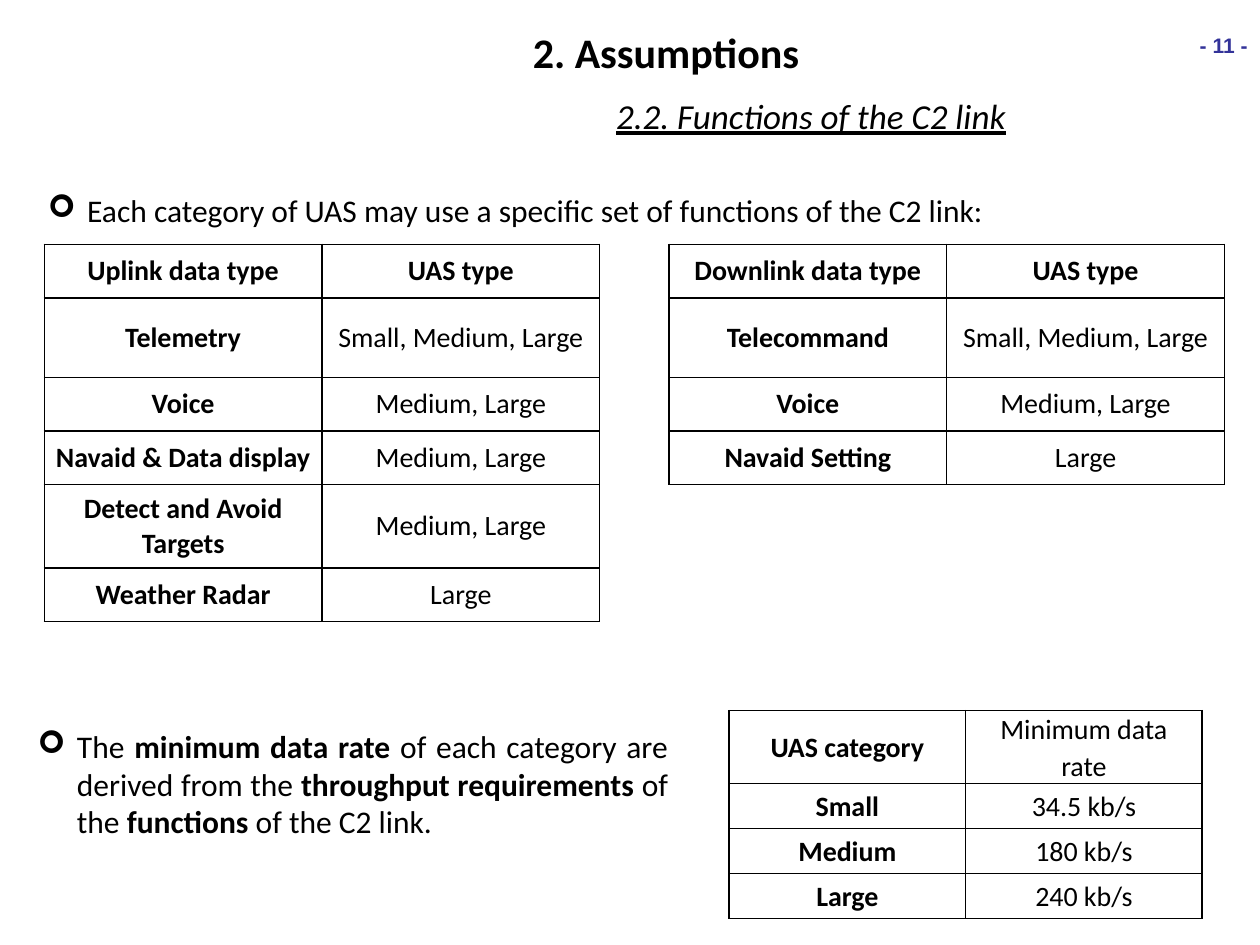
from lxml import etree
from pptx import Presentation
from pptx.dml.color import RGBColor
from pptx.enum.text import MSO_ANCHOR as Anchor, PP_ALIGN as Align
from pptx.oxml.ns import qn
from pptx.util import Pt

COLORS = {"text": "000000", "border": "000000", "page": "333399"}
INDENT = 22.5
CELL_INSET = 5.2
ROW, TALL_ROW, WRAPPED_ROW = 30.7, 45.2, 47.6

UPLINK = [
    ("Uplink data type", "UAS type"),
    ("Telemetry", "Small, Medium, Large"),
    ("Voice", "Medium, Large"),
    ("Navaid & Data display", "Medium, Large"),
    ("Detect and Avoid Targets", "Medium, Large"),
    ("Weather Radar", "Large"),
]
DOWNLINK = [
    ("Downlink data type", "UAS type"),
    ("Telecommand", "Small, Medium, Large"),
    ("Voice", "Medium, Large"),
    ("Navaid Setting", "Large"),
]
DATA_RATES = [
    ("UAS category", "Minimum data rate"),
    ("Small", "34.5 kb/s"),
    ("Medium", "180 kb/s"),
    ("Large", "240 kb/s"),
]


def write(paragraph, text, size=16, font="Calibri", color="text",
          bold=False, italic=False, underline=False, align=None):
    """Append one formatted run to the paragraph."""
    run = paragraph.add_run()
    run.text = text
    run.font.size = Pt(size)
    run.font.name = font
    run.font.color.rgb = RGBColor.from_string(COLORS[color])
    run.font.bold = bold
    run.font.italic = italic
    run.font.underline = underline
    if align is not None:
        paragraph.alignment = align


def add_box(slide, left, top, width, height, wrap=True):
    """Add a text box and return its first paragraph."""
    frame = slide.shapes.add_textbox(
        Pt(left), Pt(top), Pt(width), Pt(height)).text_frame
    frame.word_wrap = wrap
    return frame.paragraphs[0]


def add_bullet(slide, left, top, width, height, parts):
    """Add an arrow-bulleted paragraph from (text, bold) parts."""
    paragraph = add_box(slide, left, top, width, height)
    properties = paragraph._p.get_or_add_pPr()
    properties.set("marL", str(Pt(INDENT)))
    properties.set("indent", str(Pt(-INDENT)))
    etree.SubElement(properties, qn("a:buFont"), typeface="Wingdings")
    etree.SubElement(properties, qn("a:buChar"), char="➢")
    paragraph.space_after = Pt(24)
    for text, bold in parts:
        write(paragraph, text, size=18, bold=bold, align=Align.JUSTIFY)


def add_borders(cell):
    properties = cell._tc.get_or_add_tcPr()
    for side in ("a:lnL", "a:lnR", "a:lnT", "a:lnB"):
        line = etree.SubElement(properties, qn(side), w=str(Pt(1)))
        fill = etree.SubElement(line, qn("a:solidFill"))
        etree.SubElement(fill, qn("a:srgbClr"), val=COLORS["border"])


def add_grid(slide, left, top, column_width, row_heights, rows,
             bold_header=True, line_spacing=None):
    """Add a two-column bordered table with bold row labels."""
    table = slide.shapes.add_table(
        len(rows), 2, Pt(left), Pt(top),
        Pt(2 * column_width), Pt(sum(row_heights))).table
    table.first_row = table.horz_banding = False
    for column in table.columns:
        column.width = Pt(column_width)
    for r, (height, texts) in enumerate(zip(row_heights, rows)):
        table.rows[r].height = Pt(height)
        for c, text in enumerate(texts):
            cell = table.cell(r, c)
            cell.margin_left = cell.margin_right = Pt(CELL_INSET)
            cell.margin_top = cell.margin_bottom = 0
            cell.vertical_anchor = Anchor.MIDDLE
            add_borders(cell)
            cell.fill.background()
            paragraph = cell.text_frame.paragraphs[0]
            paragraph.line_spacing = line_spacing
            write(paragraph, text, align=Align.CENTER,
                  bold=c == 0 or (r == 0 and bold_header))


def main():
    deck = Presentation()
    deck.slide_width, deck.slide_height = Pt(720), Pt(540)
    slide = deck.slides.add_slide(deck.slide_layouts[6])

    write(add_box(slide, 669, 15, 51, 21.6, wrap=False), "- 11 -", size=12,
          font="Arial", color="page", bold=True, align=Align.RIGHT)
    write(add_box(slide, 297.4, 11.5, 168.5, 36, wrap=False),
          "2. Assumptions", size=24, bold=True)
    write(add_box(slide, 345, 50.4, 360.7, 31.5),
          "2.2. Functions of the C2 link", size=20, italic=True,
          underline=True, align=Align.JUSTIFY)

    add_bullet(slide, 20.2, 105.8, 686, 29, [
        ("Each category of UAS may use a specific set of functions "
         "of the C2 link:", False)])
    common_rows = [ROW, TALL_ROW, ROW, ROW]
    add_grid(slide, 25.3, 139.7, 158.7, common_rows + [WRAPPED_ROW, ROW], UPLINK)
    add_grid(slide, 382.3, 139.7, 158.7, common_rows, DOWNLINK)

    add_bullet(slide, 14.4, 411.8, 374.4, 72.7, [
        ("The ", False),
        ("minimum data rate ", True),
        ("of each category are derived from the ", False),
        ("throughput requirements ", True),
        ("of the ", False),
        ("functions", True),
        (" of the C2 link.", False)])
    add_grid(slide, 416.6, 406, 135.2, [41.8] + [25.7] * 3, DATA_RATES,
             bold_header=False, line_spacing=1.07)

    deck.save("out.pptx")


if __name__ == "__main__":
    main()
